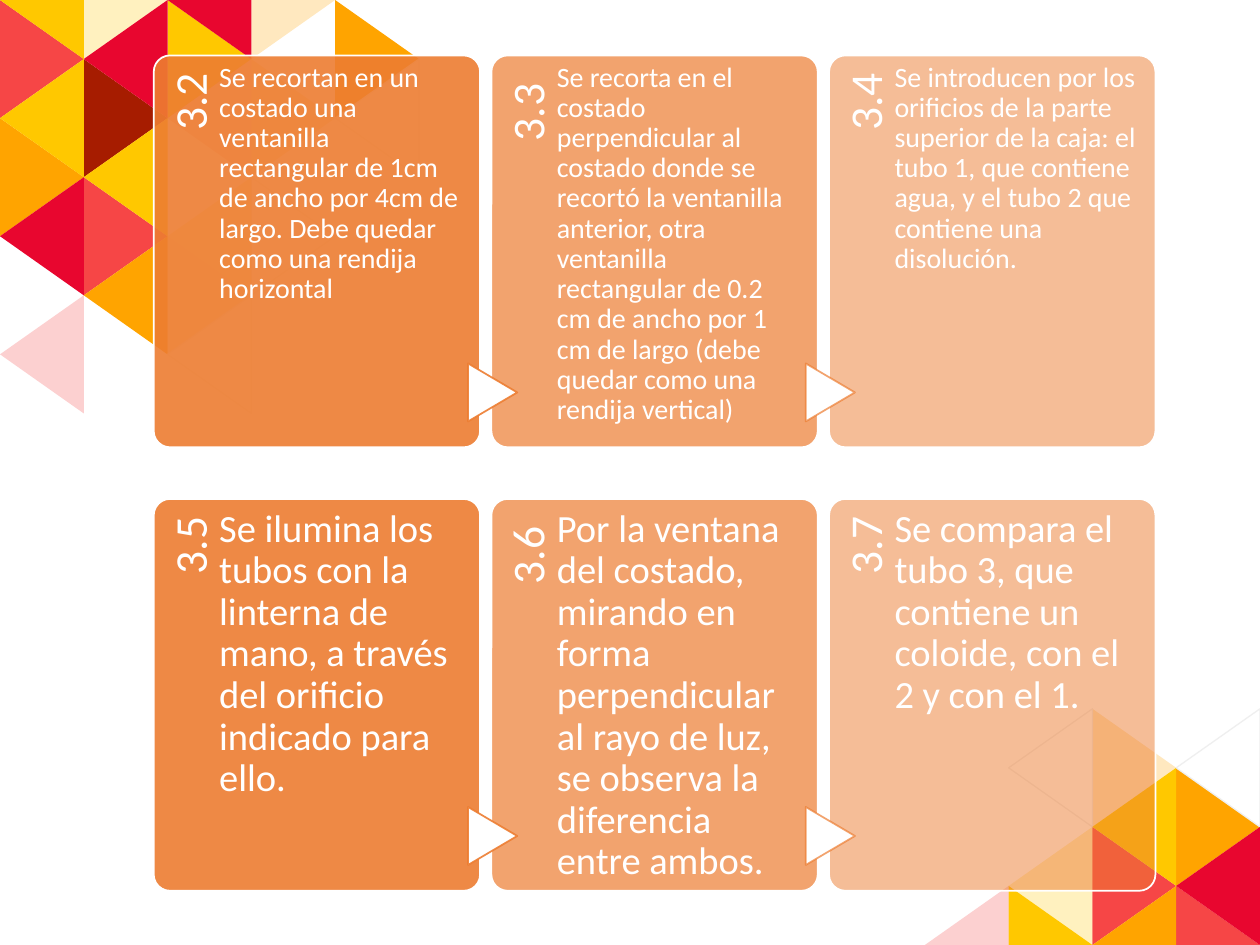
from lxml.etree import SubElement
from pptx import Presentation
from pptx.dml.color import RGBColor
from pptx.enum.shapes import MSO_SHAPE
from pptx.enum.text import PP_ALIGN
from pptx.oxml.ns import qn
from pptx.util import Inches, Pt

presentation = Presentation()
presentation.slide_width = Inches(10)
presentation.slide_height = Inches(7.5)
slide = presentation.slides.add_slide(presentation.slide_layouts[6])
shapes = slide.shapes


def paint(shape, fill_color, fill_opacity=100, line_color=None, line_width=1, line_opacity=100):
    """Set fill and outline; opacities are percentages."""
    shape.shadow.inherit = False
    shape.fill.solid()
    shape.fill.fore_color.rgb = RGBColor.from_string(fill_color)
    if line_color:
        shape.line.width = Pt(line_width)
        shape.line.color.rgb = RGBColor.from_string(line_color)
    else:
        shape.line.fill.background()
    properties = shape.element.spPr
    for location, opacity in (("a:solidFill", fill_opacity), ("a:ln/a:solidFill", line_opacity)):
        if opacity < 100:
            color = properties.xpath(f"./{location}/a:srgbClr")[0]
            SubElement(color, qn("a:alpha")).set("val", str(opacity * 1000))


def add_text(text, left, top, width, height, size, insets):
    box = shapes.add_textbox(Inches(left), Inches(top), Inches(width), Inches(height))
    frame = box.text_frame
    frame.word_wrap = True
    frame.margin_left, frame.margin_top, frame.margin_right, frame.margin_bottom = map(Inches, insets)
    paragraph = frame.paragraphs[0]
    paragraph.text = text
    paragraph.line_spacing = 0.9
    paragraph.font.name = "Calibri"
    paragraph.font.size = Pt(size)
    paragraph.font.color.rgb = RGBColor.from_string("FFFFFF")
    return box


# Triangle mosaics: column, top row, direction the tip points, colour, opacity
top_left_tiles = [
    (0, 2, "right", "FFA400", 100), (1, 1, "right", "A61C00", 100),
    (1, 3, "right", "F64646", 100), (3, 1, "right", "FFA400", 25),
    (2, 4, "right", "FFA400", 25), (3, 3, "right", "FFFFFF", 100),
    (0, 0, "right", "F64646", 100), (1, -1, "right", "FFC800", 25),
    (2, 0, "right", "FFC800", 100), (3, -1, "right", "FFA400", 25),
    (4, 0, "right", "FFA400", 100), (0, 1, "left", "FFC800", 100),
    (1, 2, "left", "FFC800", 100), (0, 3, "left", "E8062F", 100),
    (1, 4, "left", "FFA400", 100), (0, 5, "left", "F64646", 25),
    (2, 1, "left", "F64646", 25), (2, 3, "left", "FFC800", 25),
    (2, 5, "left", "FFFFFF", 100), (4, 1, "left", "FFFFFF", 100),
    (0, -1, "left", "FFC800", 100), (1, 0, "left", "E8062F", 100),
    (2, -1, "left", "E8062F", 100),
]
bottom_right_tiles = [
    (2, 0, "right", "FFA400", 25), (3, 1, "right", "FFA400", 100),
    (1, 3, "right", "FFC800", 100), (2, 2, "right", "F64646", 100),
    (3, 3, "right", "F64646", 100), (1, 0, "left", "FFFFFF", 100),
    (3, 0, "left", "FFFFFF", 100), (2, 1, "left", "FFC800", 100),
    (1, 2, "left", "FFC800", 25), (2, 3, "left", "FFA400", 100),
    (3, 2, "left", "E8062F", 100), (0, 3, "left", "F64646", 25),
]
slide_width, slide_height = presentation.slide_width, presentation.slide_height
tile_width = slide_width * 0.0665
tile_rise = slide_height / 16
mosaics = [
    (0, 0, top_left_tiles),
    (slide_width - 4 * tile_width, slide_height - 4 * tile_rise, bottom_right_tiles),
]
for origin_x, origin_y, tiles in mosaics:
    for column, row, direction, color, opacity in tiles:
        base, tip = (column, column + 1) if direction == "right" else (column + 1, column)
        # Tiles that cross the slide's edge are cut off there
        corners = [
            (round(origin_x + x * tile_width),
             round(min(max(origin_y + y * tile_rise, 0), slide_height)))
            for x, y in ((base, row), (base, row + 2), (tip, row + 1))
        ]
        outline = shapes.build_freeform(*corners[0])
        outline.add_line_segments(corners[1:])
        tile = outline.convert_to_shape()
        paint(tile, color, opacity, "EFEFEF" if color == "FFFFFF" else None, 0.75)

# Step cards: one row per text size
card_width, card_height = 2.59, 3.11
first_left, first_top = 1.22, 0.44
column_pitch, row_pitch = 2.68, 3.52
number_length, number_depth = 2.54, 0.5
arrow_width, arrow_height = 0.46, 0.39
card_opacities = [90, 70, 50]
step_rows = [
    (16, 0.06, [
        ("3.2", "Se recortan en un costado una ventanilla rectangular de 1cm de ancho por 4cm "
                "de largo. Debe quedar como una rendija horizontal"),
        ("3.3 ", "Se recorta en el costado perpendicular al costado donde se recortó la "
                 "ventanilla anterior, otra ventanilla rectangular de 0.2 cm de ancho por 1 cm "
                 "de largo (debe quedar como una rendija vertical)"),
        ("3.4", "Se introducen por los orificios de la parte superior de la caja: el tubo 1, "
                "que contiene agua, y el tubo 2 que contiene una disolución."),
    ]),
    (22, 0.08, [
        ("3.5", "Se ilumina los tubos con la linterna de mano, a través del orificio indicado "
                "para ello."),
        ("3.6 ", "Por la ventana del costado, mirando en forma perpendicular al rayo de luz, "
                 "se observa la diferencia entre ambos."),
        ("3.7", "Se compara el tubo 3, que contiene un coloide, con el 2 y con el 1."),
    ]),
]
for row, (text_size, text_inset, steps) in enumerate(step_rows):
    top = first_top + row * row_pitch
    for column, (number, text) in enumerate(steps):
        left = first_left + column * column_pitch
        card = shapes.add_shape(MSO_SHAPE.ROUNDED_RECTANGLE, Inches(left), Inches(top),
                                Inches(card_width), Inches(card_height))
        card.adjustments[0] = 0.05
        paint(card, "ED7D31", card_opacities[column], "FFFFFF")

        label = add_text(number, left - 1.01, top + 1.03, number_length, number_depth,
                         26, (0, 0.1, 0.13, 0))
        label.rotation = 270
        label.text_frame.paragraphs[0].alignment = PP_ALIGN.RIGHT

        if column > 0:
            arrow = shapes.add_shape(MSO_SHAPE.FLOWCHART_EXTRACT, Inches(left - 0.22),
                                     Inches(top + 2.48), Inches(arrow_width), Inches(arrow_height))
            arrow.rotation = 90
            paint(arrow, "FFFFFF", 100, "ED7D31", 1, card_opacities[column - 1])

        add_text(text, left + 0.52, top, 1.93, card_height, text_size, (0, text_inset, 0, 0))

presentation.save("out.pptx")
